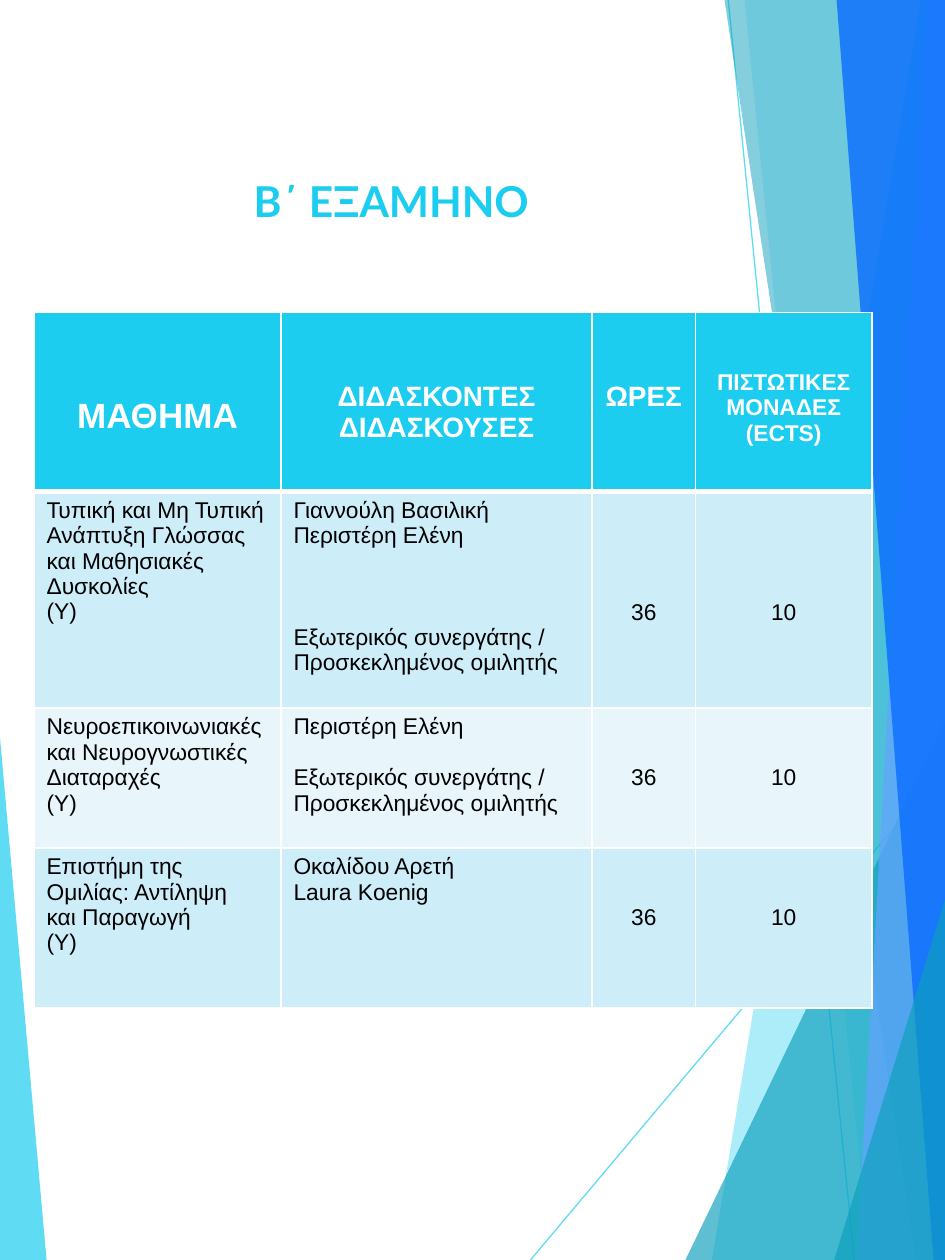
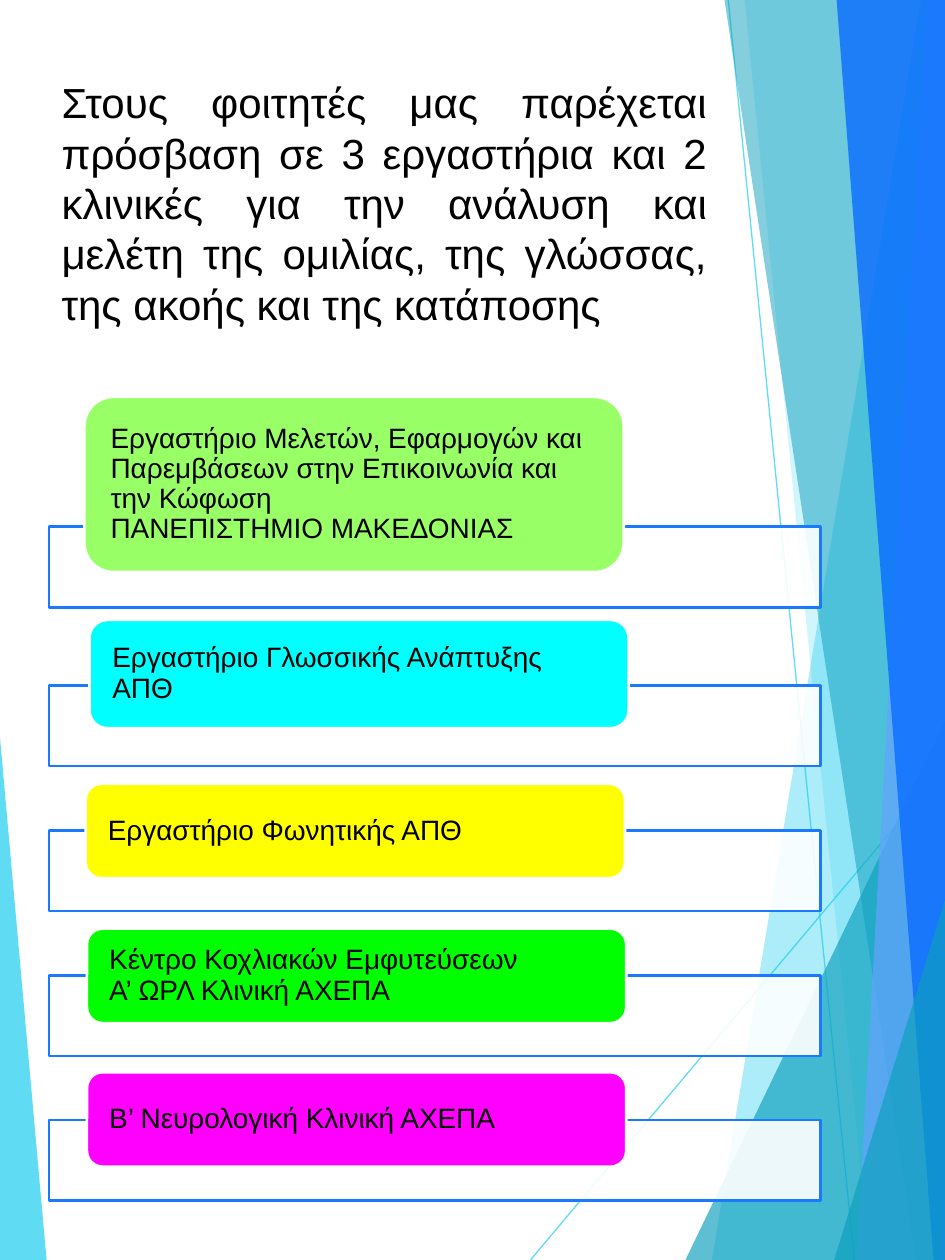
from dataclasses import dataclass

from lxml import etree
from pptx import Presentation
from pptx.dml.color import RGBColor
from pptx.enum.shapes import MSO_CONNECTOR, MSO_SHAPE
from pptx.enum.text import MSO_ANCHOR, PP_ALIGN
from pptx.oxml.ns import qn
from pptx.util import Inches, Pt

LEFT, CENTER, JUSTIFY = PP_ALIGN.LEFT, PP_ALIGN.CENTER, PP_ALIGN.JUSTIFY
TOP, MIDDLE = MSO_ANCHOR.TOP, MSO_ANCHOR.MIDDLE
RECT, ROUNDED = MSO_SHAPE.RECTANGLE, MSO_SHAPE.ROUNDED_RECTANGLE
STRAIGHT = MSO_CONNECTOR.STRAIGHT

# Every length counts cells of a fine grid laid over the slide.
GRID_COLS, GRID_ROWS = 750, 1000
CELL = Inches(0.01)
LINE_HEIGHT = 1.12


@dataclass(frozen=True)
class Theme:
    cyan: str = "1CCDF0"
    teal: str = "0C9FBD"
    sky: str = "65A3FF"
    blue: str = "0C6EFF"
    outline: str = "1B79FD"
    white: str = "FFFFFF"
    black: str = "000000"
    row_dark: str = "CDEDF9"
    row_light: str = "E8F6FC"
    body_font: str = "Arial"
    semester_font: str = "Lato"
    title_size: float = 24
    semester_size: float = 24.3
    card_size: float = 16
    cell_size: float = 13


THEME = Theme()

# Points of each facet, its colour and its opacity in percent.
FACETS = [
    ([(0, 585), (37, 1000), (0, 1000)], THEME.cyan, 70),
    ([(731, 0), (565, 1000), (750, 1000), (750, 0)], THEME.cyan, 36),
    ([(591, 0), (690, 1000), (750, 1000), (750, 0)], THEME.cyan, 20),
    ([(544, 1000), (750, 572), (750, 1000)], THEME.teal, 66),
    ([(575, 0), (727, 1000), (750, 1000), (750, 0)], THEME.teal, 50),
    ([(736, 0), (680, 1000), (750, 1000), (750, 0)], THEME.sky, 70),
    ([(664, 0), (741, 1000), (750, 1000), (750, 0)], THEME.blue, 82),
    ([(662, 1000), (750, 714), (750, 1000)], THEME.teal, 66),
]
RAYS = [(421, 1000, 750, 609), (578, 0, 678, 1000)]

COURSE_COLS = [196, 247, 82, 140]
COURSE_ROWS = [142, 172, 111, 127]
# Heading lines and type size of each column; all start two lines down.
HEADINGS = [
    (["ΜΑΘΗΜΑ"], 20),
    (["ΔΙΔΑΣΚΟΝΤΕΣ", "ΔΙΔΑΣΚΟΥΣΕΣ"], 16),
    (["ΩΡΕΣ"], 16),
    (["ΠΙΣΤΩΤΙΚΕΣ ΜΟΝΑΔΕΣ", "(ECTS)"], 13),
]
GUEST = "Εξωτερικός συνεργάτης / Προσκεκλημένος ομιλητής"
# Course, teachers, lines left free above the guest, lines above the figures.
COURSES = [
    (["Τυπική και Μη Τυπική Ανάπτυξη Γλώσσας και Μαθησιακές Δυσκολίες", "(Υ)"],
     ["Γιαννούλη Βασιλική", "Περιστέρη Ελένη", GUEST], 3, 4),
    (["Νευροεπικοινωνιακές και Νευρογνωστικές Διαταραχές", "(Υ)"],
     ["Περιστέρη Ελένη", GUEST], 1, 2),
    (["Επιστήμη της Ομιλίας: Αντίληψη", "και Παραγωγή", "(Υ)"],
     ["Oκαλίδου Αρετή", "Laura Koenig"], 0, 2),
]
HOURS, CREDITS = "36", "10"

ACCESS = ("Στους φοιτητές μας παρέχεται πρόσβαση σε 3 εργαστήρια και 2 κλινικές "
          "για την ανάλυση και μελέτη της ομιλίας, της γλώσσας, της ακοής και "
          "της κατάποσης")
# Bar top; card left, top and height; card colour; lines.
FACILITIES = [
    (418, 67, 315, 139, "99FF66",
     ["Εργαστήριο Μελετών, Εφαρμογών και Παρεμβάσεων στην Επικοινωνία και την Κώφωση",
      "ΠΑΝΕΠΙΣΤΗΜΙΟ ΜΑΚΕΔΟΝΙΑΣ"]),
    (544, 71, 492, 86, "00FFFF", ["Εργαστήριο Γλωσσικής Ανάπτυξης ΑΠΘ"]),
    (659, 68, 622, 75, "FFFF00", ["Εργαστήριο Φωνητικής ΑΠΘ"]),
    (774, 69, 737, 75, "00FF00",
     ["Κέντρο Κοχλιακών Εμφυτεύσεων", "Α’ ΩΡΛ Κλινική ΑΧΕΠΑ"]),
    (889, 69, 851, 75, "FF00FF", ["Β’ Νευρολογική Κλινική ΑΧΕΠΑ"]),
]


def grid(*counts):
    return [CELL * count for count in counts]


def rgb(code):
    return RGBColor.from_string(code)


def set_opacity(owner, percent):
    """Make the one solid colour directly inside the owner translucent."""
    color = owner.find(qn("a:solidFill"))[0]
    etree.SubElement(color, qn("a:alpha")).set("val", str(percent * 1000))


def paint(shape, fill, opacity=100, line=None):
    shape.shadow.inherit = False
    shape.fill.solid()
    shape.fill.fore_color.rgb = rgb(fill)
    if opacity < 100:
        set_opacity(shape._element.spPr, opacity)
    if line:
        shape.line.color.rgb = rgb(line)
        shape.line.width = Pt(1.5)
    else:
        shape.line.fill.background()


def write(frame, lines, size, color=THEME.black, font=THEME.body_font,
          bold=False, align=LEFT, spacing=None):
    frame.text = "\n".join(lines)
    for paragraph in frame.paragraphs:
        paragraph.alignment = align
        if spacing:
            paragraph.line_spacing = spacing
        for run in paragraph.runs:
            run.font.size = Pt(size)
            run.font.name = font
            run.font.bold = bold
            run.font.color.rgb = rgb(color)


def add_facet(slide, points, color, opacity):
    builder = slide.shapes.build_freeform(*points[0], scale=CELL)
    builder.add_line_segments(points[1:], close=True)
    paint(builder.convert_to_shape(), color, opacity)


def add_ray(slide, ends):
    ray = slide.shapes.add_connector(STRAIGHT, *grid(*ends))
    ray.line.color.rgb = rgb(THEME.cyan)
    ray.line.width = Pt(0.75)
    properties = ray._element.spPr
    set_opacity(properties.find(qn("a:ln")), 70)
    etree.SubElement(properties, qn("a:effectLst"))


def add_backdrop_slide(deck):
    slide = deck.slides.add_slide(deck.slide_layouts[6])
    left_facet, *right_facets = FACETS
    add_facet(slide, *left_facet)
    for ends in RAYS:
        add_ray(slide, ends)
    for facet in right_facets:
        add_facet(slide, *facet)
    return slide


def add_title(slide, place, text, size, **style):
    frame = slide.shapes.add_textbox(*grid(*place)).text_frame
    frame.word_wrap = True
    frame.vertical_anchor = TOP
    write(frame, [text], size, **style)


def set_borders(cell, bottom):
    properties = cell._tc.get_or_add_tcPr()
    widths = {"a:lnL": 1, "a:lnR": 1, "a:lnT": 1, "a:lnB": bottom}
    for position, (tag, width) in enumerate(widths.items()):
        border = etree.Element(qn(tag), w=str(Pt(width)))
        fill = etree.SubElement(border, qn("a:solidFill"))
        etree.SubElement(fill, qn("a:srgbClr"), val=THEME.white)
        properties.insert(position, border)


def fill_cell(cell, lines, fill, size=THEME.cell_size, free_lines=0,
              bottom=1, **style):
    cell.fill.solid()
    cell.fill.fore_color.rgb = rgb(fill)
    set_borders(cell, bottom)
    cell.vertical_anchor = TOP
    cell.margin_top = Inches(0.05) + Pt(free_lines * size * LINE_HEIGHT)
    write(cell.text_frame, lines, size, **style)


def add_course_table(slide):
    place = grid(27, 248, sum(COURSE_COLS), sum(COURSE_ROWS))
    table = slide.shapes.add_table(len(COURSE_ROWS), len(COURSE_COLS), *place).table
    for column, width in zip(table.columns, grid(*COURSE_COLS)):
        column.width = width
    for row, height in zip(table.rows, grid(*COURSE_ROWS)):
        row.height = height

    for column, (lines, size) in enumerate(HEADINGS):
        fill_cell(table.cell(0, column), lines, THEME.cyan, size, free_lines=2,
                  bottom=3, color=THEME.white, bold=True, align=CENTER)
    for row, (course, teachers, guest_gap, figure_gap) in enumerate(COURSES, 1):
        fill = THEME.row_dark if row % 2 else THEME.row_light
        fill_cell(table.cell(row, 0), course, fill)
        fill_cell(table.cell(row, 1), teachers, fill)
        guest = table.cell(row, 1).text_frame.paragraphs[-1]
        guest.space_before = Pt(guest_gap * THEME.cell_size * LINE_HEIGHT)
        for column, figure in enumerate([HOURS, CREDITS], 2):
            fill_cell(table.cell(row, column), [figure], fill,
                      free_lines=figure_gap, align=CENTER)


def add_facility(slide, bar_top, left, top, height, color, lines):
    """Draw a wide bar with a coloured card that overlaps its upper edge."""
    bar = slide.shapes.add_shape(RECT, *grid(39, bar_top, 612, 64))
    paint(bar, THEME.white, 90, THEME.outline)
    card = slide.shapes.add_shape(ROUNDED, *grid(left, top, 428, height))
    paint(card, color, line=THEME.white)
    frame = card.text_frame
    frame.word_wrap = True
    frame.vertical_anchor = MIDDLE
    frame.margin_left = frame.margin_right = Inches(0.14)
    frame.margin_top = frame.margin_bottom = 0
    write(frame, lines, THEME.card_size, spacing=0.9)


def main():
    deck = Presentation()
    deck.slide_width, deck.slide_height = grid(GRID_COLS, GRID_ROWS)

    semester = add_backdrop_slide(deck)
    add_title(semester, (50, 134, 521, 69), "Β΄ ΕΞΑΜΗΝΟ", THEME.semester_size,
              color=THEME.cyan, font=THEME.semester_font, bold=True, align=CENTER)
    add_course_table(semester)

    facilities = add_backdrop_slide(deck)
    add_title(facilities, (39, 56, 532, 207), ACCESS, THEME.title_size,
              align=JUSTIFY)
    for facility in FACILITIES:
        add_facility(facilities, *facility)

    deck.save("out.pptx")


if __name__ == "__main__":
    main()
